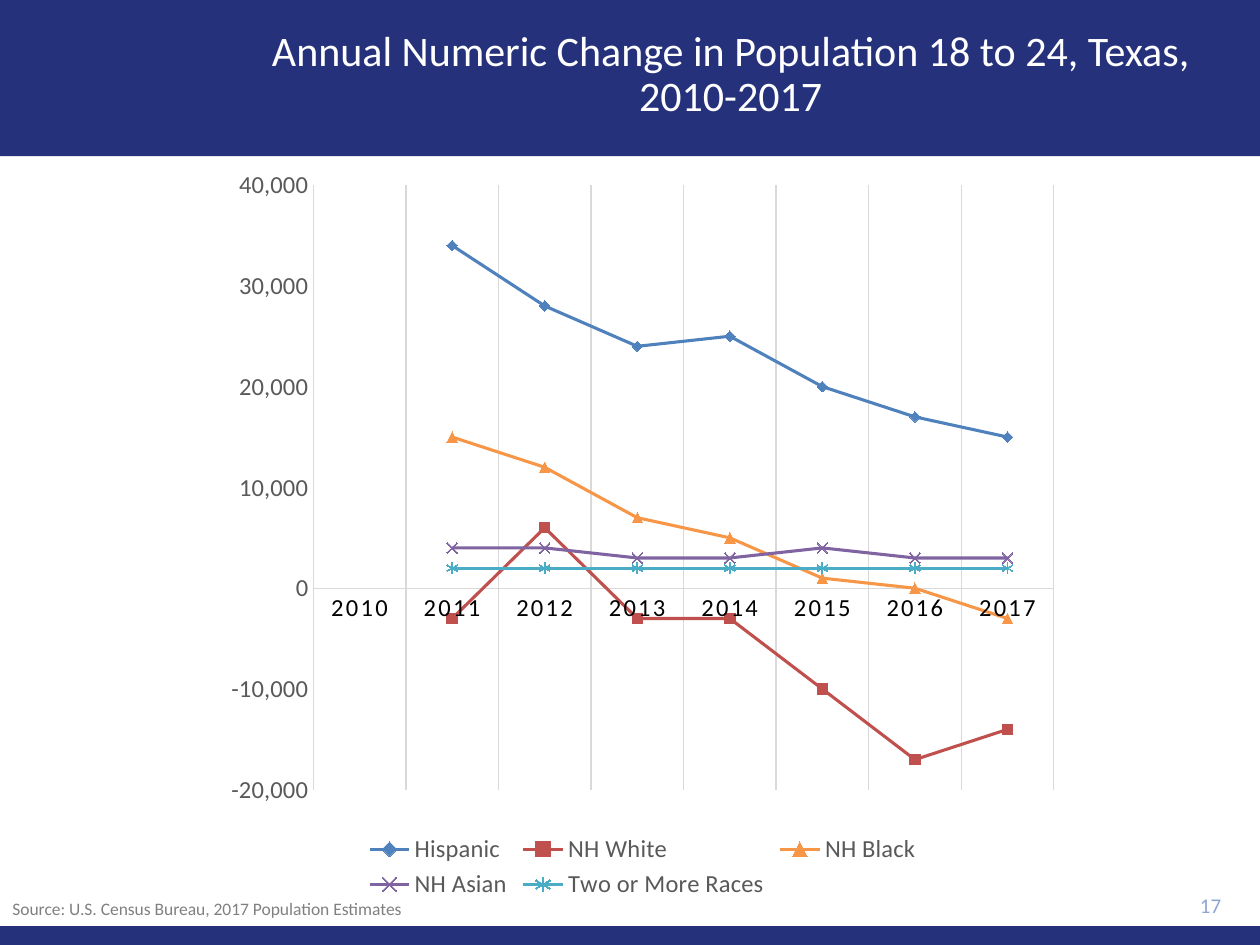
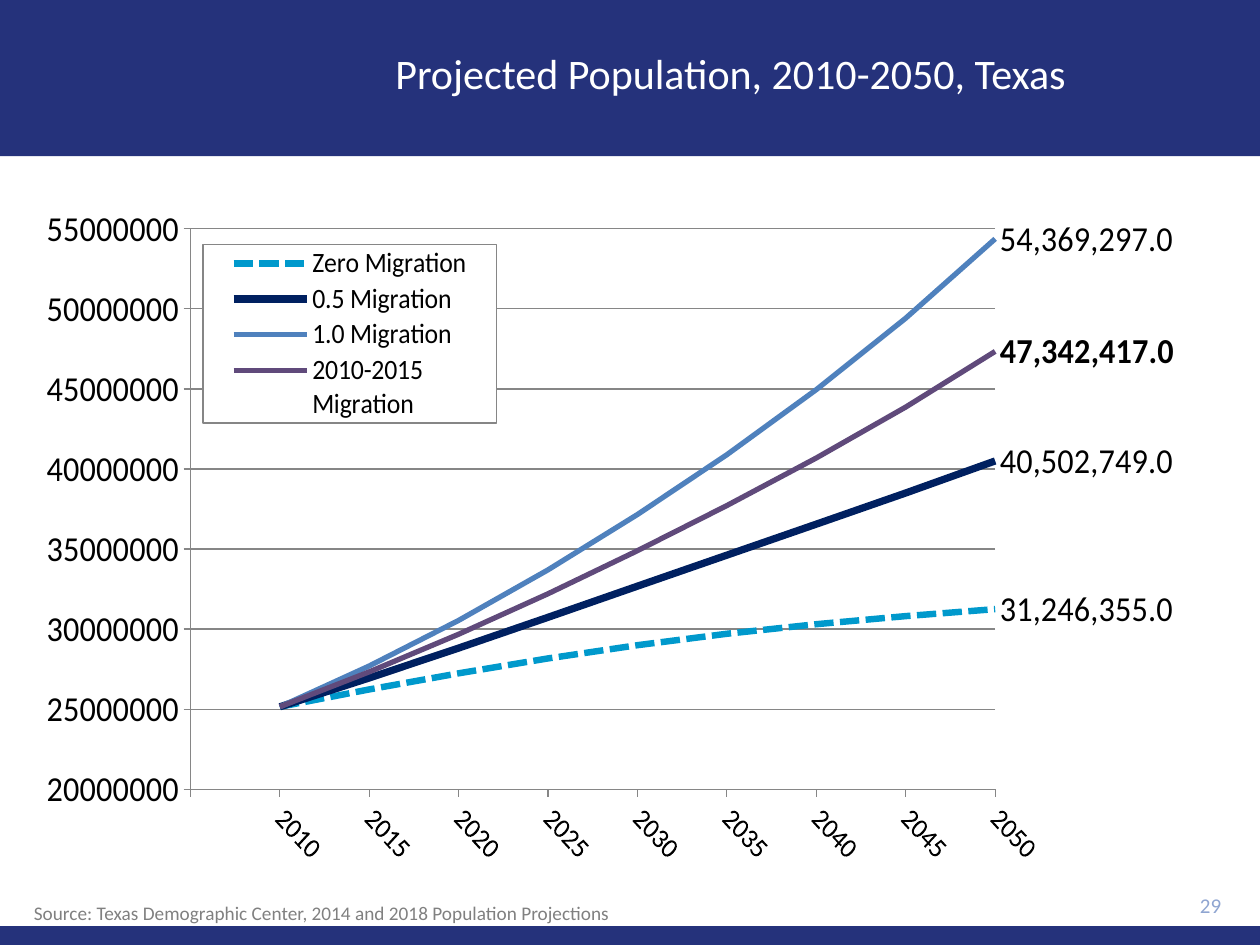
"""Builds two Texas population slides, each with a title band and a line chart."""
from pptx import Presentation
from pptx.chart.data import CategoryChartData
from pptx.dml.color import RGBColor
from pptx.enum import chart as ch, dml, shapes, text
from pptx.oxml import parse_xml
from pptx.oxml.ns import nsdecls
from pptx.util import Pt

NAVY = RGBColor(0x25, 0x32, 0x7B)
WHITE = RGBColor(0xFF, 0xFF, 0xFF)
BLACK = RGBColor(0, 0, 0)
NUMBER_BLUE = RGBColor(0x8F, 0xA5, 0xD1)
SOURCE_GREY = RGBColor(0x80, 0x80, 0x80)
LABEL_GREY = RGBColor(0x59, 0x59, 0x59)
PALE_GREY = RGBColor(0xD9, 0xD9, 0xD9)
AXIS_GREY = RGBColor(0x86, 0x86, 0x86)
BLUE = RGBColor(0x4F, 0x81, 0xBD)
RED = RGBColor(0xC0, 0x50, 0x4D)
ORANGE = RGBColor(0xF7, 0x96, 0x46)
PURPLE = RGBColor(0x80, 0x64, 0xA2)
TEAL = RGBColor(0x4B, 0xAC, 0xC6)
CYAN = RGBColor(0x00, 0x99, 0xCC)
DEEP_BLUE = RGBColor(0x00, 0x20, 0x60)
PLUM = RGBColor(0x60, 0x4A, 0x7B)
FONT = "Calibri"


def add_label(page, words, frame, size, colour, align, anchor, wrap=True):
    box = page.shapes.add_textbox(*map(Pt, frame))
    box.text_frame.word_wrap = wrap
    box.text_frame.vertical_anchor = anchor
    para = box.text_frame.paragraphs[0]
    para.text = words
    para.alignment = align
    para.font.name, para.font.size = FONT, Pt(size)
    para.font.color.rgb = colour
    return para


def layout_xml(left, top, width, height, inner=False):
    target = '<c:layoutTarget val="inner"/>' if inner else ""
    return parse_xml(
        f'<c:layout {nsdecls("c")}><c:manualLayout>{target}'
        '<c:xMode val="edge"/><c:yMode val="edge"/>'
        f'<c:x val="{left}"/><c:y val="{top}"/><c:w val="{width}"/><c:h val="{height}"/>'
        '</c:manualLayout></c:layout>')


deck = Presentation()
deck.slide_width, deck.slide_height = Pt(720), Pt(540)
LEFT, CENTER, RIGHT = text.PP_ALIGN.LEFT, text.PP_ALIGN.CENTER, text.PP_ALIGN.RIGHT
TOP, MIDDLE = text.MSO_ANCHOR.TOP, text.MSO_ANCHOR.MIDDLE
MARK = ch.XL_MARKER_STYLE

change_series = [
    ("Hispanic", BLUE, MARK.DIAMOND, [34000, 28000, 24000, 25000, 20000, 17000, 15000]),
    ("NH White", RED, MARK.SQUARE, [-3000, 6000, -3000, -3000, -10000, -17000, -14000]),
    ("NH Black", ORANGE, MARK.TRIANGLE, [15000, 12000, 7000, 5000, 1000, 0, -3000]),
    ("NH Asian", PURPLE, MARK.X, [4000, 4000, 3000, 3000, 4000, 3000, 3000]),
    ("Two or More Races", TEAL, MARK.STAR, [2000] * 7),
]
projection_series = [
    ("Zero Migration", CYAN, 4,
     [25145561, 26230098, 27238610, 28165689, 28994210, 29705207, 30305304, 30808219, 31246355]),
    ("0.5 Migration", DEEP_BLUE, 4.5,
     [25145561, 26947116, 28813282, 30734321, 32680217, 34616890, 36550595, 38499538, 40502749]),
    ("1.0 Migration", BLUE, 3.25,
     [25145561, 27695284, 30541978, 33699307, 37155084, 40892255, 44955896, 49416165, 54369297]),
    ("2010-2015 Migration", PLUM, 3.25,
     [25145561, 27326252, 29677772, 32204904, 34894429, 37716507, 40686490, 43867040, 47342417]),
]
slides = [
    ("Annual Numeric Change in Population 18 to 24, Texas, 2010-2017", "17",
     [str(year) for year in range(2010, 2018)], change_series,
     ch.XL_CHART_TYPE.LINE_MARKERS, (122.4, 88.56, 489.6, 428.4), 14,
     "#,##0", (-20000, 40000, 10000), PALE_GREY, "between"),
    ("Projected Population, 2010-2050, Texas", "29",
     [""] + [str(year) for year in range(2010, 2051, 5)], projection_series,
     ch.XL_CHART_TYPE.LINE, (26.64, 84.24, 644.4, 415.44), 20,
     "0", (20000000, 55000000, 5000000), AXIS_GREY, "midCat"),
]

pages, charts = [], []
for title, number, years, rows, kind, frame, size, pattern, scale, grey, crossing in slides:
    page = deck.slides.add_slide(deck.slide_layouts[6])
    for top, height in ((0, 89.28), (529.2, 10.8)):
        band = page.shapes.add_shape(shapes.MSO_SHAPE.RECTANGLE, 0, Pt(top), Pt(720), Pt(height))
        band.shadow.inherit = False
        band.fill.solid()
        band.fill.fore_color.rgb = NAVY
        band.line.fill.background()
    heading = add_label(page, title, (122.4, 7.2, 590.4, 72), 24, WHITE, CENTER, MIDDLE)
    heading.line_spacing = 0.9
    add_label(page, number, (640.8, 504.72, 64.08, 24.48), 12, NUMBER_BLUE, RIGHT, MIDDLE)

    data = CategoryChartData()
    data.categories = years
    for name, colour, style, values in rows:
        data.add_series(name, [None] + values)
    chart = page.shapes.add_chart(kind, *map(Pt, frame), data).chart
    chart.has_title = False
    chart.font.name, chart.font.size = FONT, Pt(size)
    chart.font.color.rgb = BLACK
    chart.plots[0].vary_by_categories = False
    chart.has_legend = True

    years_axis, people_axis = chart.category_axis, chart.value_axis
    people_axis.minimum_scale, people_axis.maximum_scale, people_axis.major_unit = scale
    people_axis.tick_labels.number_format = pattern
    people_axis.tick_labels.number_format_is_linked = False
    for spare in chart.element.xpath("//c:valAx/c:crossBetween"):
        spare.getparent().remove(spare)
    for anchor in chart.element.xpath("//c:valAx/c:crosses"):
        anchor.addnext(parse_xml(f'<c:crossBetween {nsdecls("c")} val="{crossing}"/>'))
    grid_axis = years_axis if grey == PALE_GREY else people_axis
    for axis in (years_axis, people_axis):
        axis.has_major_gridlines = axis is grid_axis
        axis.major_tick_mark = (ch.XL_TICK_MARK.NONE if grey == PALE_GREY
                                else ch.XL_TICK_MARK.OUTSIDE)
    for rule in (years_axis, people_axis, grid_axis.major_gridlines):
        rule.format.line.color.rgb = grey
        rule.format.line.width = Pt(0.75)
    for series, (name, colour, style, values) in zip(chart.plots[0].series, rows):
        series.smooth = False
        series.format.line.color.rgb = colour
    pages.append(page)
    charts.append(chart)

change, projection = charts
change.legend.position = ch.XL_LEGEND_POSITION.BOTTOM
change.legend.include_in_layout = False
for font in (change.legend.font, change.value_axis.tick_labels.font):
    font.name, font.size = FONT, Pt(14)
    font.color.rgb = LABEL_GREY
year_font = change.category_axis.tick_labels.font
year_font.name, year_font.size = FONT, Pt(14)
year_font.color.rgb = BLACK
for properties in change.element.xpath("//c:catAx/c:txPr//a:defRPr"):
    properties.set("spc", "120")
for series, (name, colour, style, values) in zip(change.plots[0].series, change_series):
    series.format.line.width = Pt(1.75)
    marker = series.marker
    marker.style, marker.size = style, 6
    marker.format.line.color.rgb = colour
    if style in (MARK.X, MARK.STAR):
        marker.format.fill.background()
    else:
        marker.format.fill.solid()
        marker.format.fill.fore_color.rgb = colour

projection.legend.position = ch.XL_LEGEND_POSITION.LEFT
projection.legend.include_in_layout = True
projection.legend.font.size = Pt(16)
projection.category_axis.tick_labels.font.size = Pt(16)
for series, (name, colour, width, values) in zip(projection.plots[0].series, projection_series):
    series.format.line.width = Pt(width)
    if colour == CYAN:
        series.format.line.dash_style = dml.MSO_LINE.SQUARE_DOT
    series.data_labels.show_value = False
    end_label = series.points[len(values)].data_label
    end_label.position = ch.XL_LABEL_POSITION.RIGHT
    end_label.font.size = Pt(20)
    end_label.font.bold = colour == PLUM

root = projection.element
for end_label in root.xpath("//c:dLbl"):
    end_label.xpath("c:idx")[0].addnext(parse_xml(
        f'<c:numFmt {nsdecls("c")} formatCode="#,##0.0" sourceLinked="0"/>'))
for body in root.xpath("//c:catAx/c:txPr/a:bodyPr"):
    body.set("rot", "2700000")
for spare in root.xpath("//c:plotArea/c:layout | //c:legend/c:layout"):
    spare.getparent().remove(spare)
for plot_area in root.xpath("//c:plotArea"):
    plot_area.insert(0, layout_xml(0.129, 0.112, 0.775, 0.771, inner=True))
for position in root.xpath("//c:legend/c:legendPos"):
    position.addnext(layout_xml(0.141, 0.134, 0.283, 0.245))
for overlay in root.xpath("//c:legend/c:overlay"):
    overlay.addnext(parse_xml(
        f'<c:spPr {nsdecls("c", "a")}><a:solidFill><a:srgbClr val="{WHITE}"/></a:solidFill>'
        f'<a:ln w="9525"><a:solidFill><a:srgbClr val="{AXIS_GREY}"/></a:solidFill></a:ln></c:spPr>'))

add_label(pages[0], "Source: U.S. Census Bureau, 2017 Population Estimates",
          (0, 509.76, 504, 19.44), 10, SOURCE_GREY, LEFT, TOP)
add_label(pages[1], "Source: Texas Demographic Center, 2014 and 2018 Population Projections",
          (12.24, 511.2, 346.32, 20.88), 11, SOURCE_GREY, LEFT, TOP, wrap=False)

deck.save("out.pptx")
